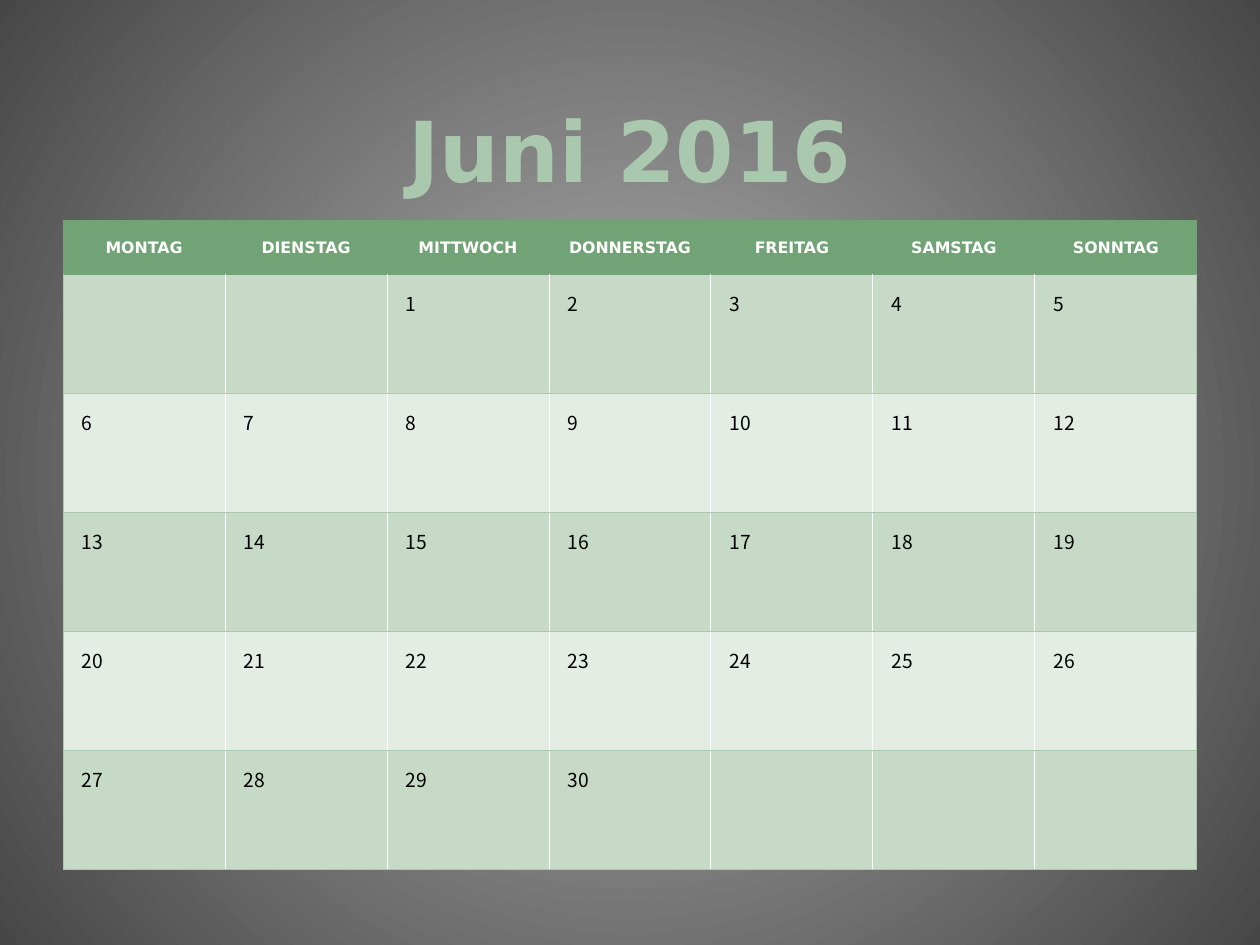
from lxml.etree import SubElement
from pptx import Presentation
from pptx.dml.color import RGBColor
from pptx.enum.text import MSO_ANCHOR, PP_ALIGN
from pptx.oxml.ns import qn
from pptx.util import Inches, Pt

HEADING_FONT, DAY_FONT = "DejaVu Sans", "Noto Sans CJK SC"
GREEN, SOFT_GREEN, WHITE = "72A376", "AAC8AD", "FFFFFF"
WEEK_FILLS = ["C7DAC8", "E3EDE4"]
WEEKDAYS = ["MONTAG", "DIENSTAG", "MITTWOCH", "DONNERSTAG",
            "FREITAG", "SAMSTAG", "SONNTAG"]
FIRST_WEEKDAY, DAYS, WEEKS = 2, 30, 5


def color(hex_string):
    return RGBColor.from_string(hex_string)


def write(frame, text, font, size, hex_color, bold=False):
    paragraph = frame.paragraphs[0]
    paragraph.text = text
    for run in paragraph.runs:
        run.font.name, run.font.size, run.font.bold = font, Pt(size), bold
        run.font.color.rgb = color(hex_color)
    return paragraph


def set_borders(cell, **sides):
    """Draw the given sides (L, R, T, B); a side of None gets no line."""
    properties = cell._tc.get_or_add_tcPr()
    for position, side in enumerate("LRTB"):
        line = SubElement(properties, qn(f"a:ln{side}"), w=str(Pt(0.5)))
        if sides[side]:
            fill = SubElement(line, qn("a:solidFill"))
            SubElement(fill, qn("a:srgbClr"), val=sides[side])
        else:
            SubElement(line, qn("a:noFill"))
        properties.insert(position, line)  # borders precede the cell fill


def paint_background(slide):
    fill = slide.background.fill
    fill.gradient()
    for stop, position, shade in zip(fill.gradient_stops, (0, 1), ("B1B1B1", "474747")):
        stop.position = position
        stop.color.rgb = color(shade)
    # Turn the linear gradient into a circular one around the centre
    gradient = slide.element.find(".//" + qn("a:gradFill"))
    gradient.remove(gradient.find(qn("a:lin")))
    circle = SubElement(gradient, qn("a:path"), path="circle")
    SubElement(circle, qn("a:fillToRect"), l="50000", t="50000", r="50000", b="50000")


def add_title(slide, left, top, width, height):
    month = slide.shapes.title
    month.left, month.top, month.width, month.height = left, top, width, height
    frame = month.text_frame
    frame.vertical_anchor = MSO_ANCHOR.BOTTOM
    frame.margin_bottom = 0
    write(frame, "Juni 2016", HEADING_FONT, 48, SOFT_GREEN, True).alignment = PP_ALIGN.CENTER


def fill_cell(cell, hex_color):
    cell.fill.solid()
    cell.fill.fore_color.rgb = color(hex_color)


def add_calendar(slide, left, top, width, height):
    columns = len(WEEKDAYS)
    calendar = slide.shapes.add_table(WEEKS + 1, columns, left, top, width, height).table
    header_height = Inches(0.43)
    calendar.rows[0].height = header_height
    for week in range(1, WEEKS + 1):
        calendar.rows[week].height = (height - header_height) // WEEKS

    # Weekday header
    for column, weekday in enumerate(WEEKDAYS):
        cell = calendar.cell(0, column)
        fill_cell(cell, GREEN)
        cell.vertical_anchor = MSO_ANCHOR.MIDDLE
        heading = write(cell.text_frame, weekday, HEADING_FONT, 9, WHITE, True)
        heading.alignment = PP_ALIGN.CENTER
        set_borders(cell, L=GREEN if column == 0 else None,
                    R=GREEN if column == columns - 1 else None, T=GREEN, B=GREEN)

    # Days, one row per week
    for week in range(WEEKS):
        for column in range(columns):
            cell = calendar.cell(week + 1, column)
            fill_cell(cell, WEEK_FILLS[week % 2])
            set_borders(cell, L=SOFT_GREEN if column == 0 else WHITE,
                        R=SOFT_GREEN if column == columns - 1 else WHITE,
                        T=GREEN if week == 0 else SOFT_GREEN, B=SOFT_GREEN)
            day = week * columns + column - FIRST_WEEKDAY + 1
            if 1 <= day <= DAYS:
                date = write(cell.text_frame, str(day), DAY_FONT, 11, "000000")
                date.line_spacing = 1.3
                date._p.get_or_add_pPr().set("marL", str(Inches(0.05)))


def main():
    deck = Presentation()
    deck.slide_width, deck.slide_height = Inches(10), Inches(7.5)
    slide = deck.slides.add_slide(deck.slide_layouts[5])  # title only
    paint_background(slide)
    add_title(slide, Inches(0.5), Inches(0.33), Inches(9), Inches(1.25))
    add_calendar(slide, Inches(0.5), Inches(1.75), Inches(9), Inches(5.15))
    deck.save("out.pptx")


if __name__ == "__main__":
    main()
